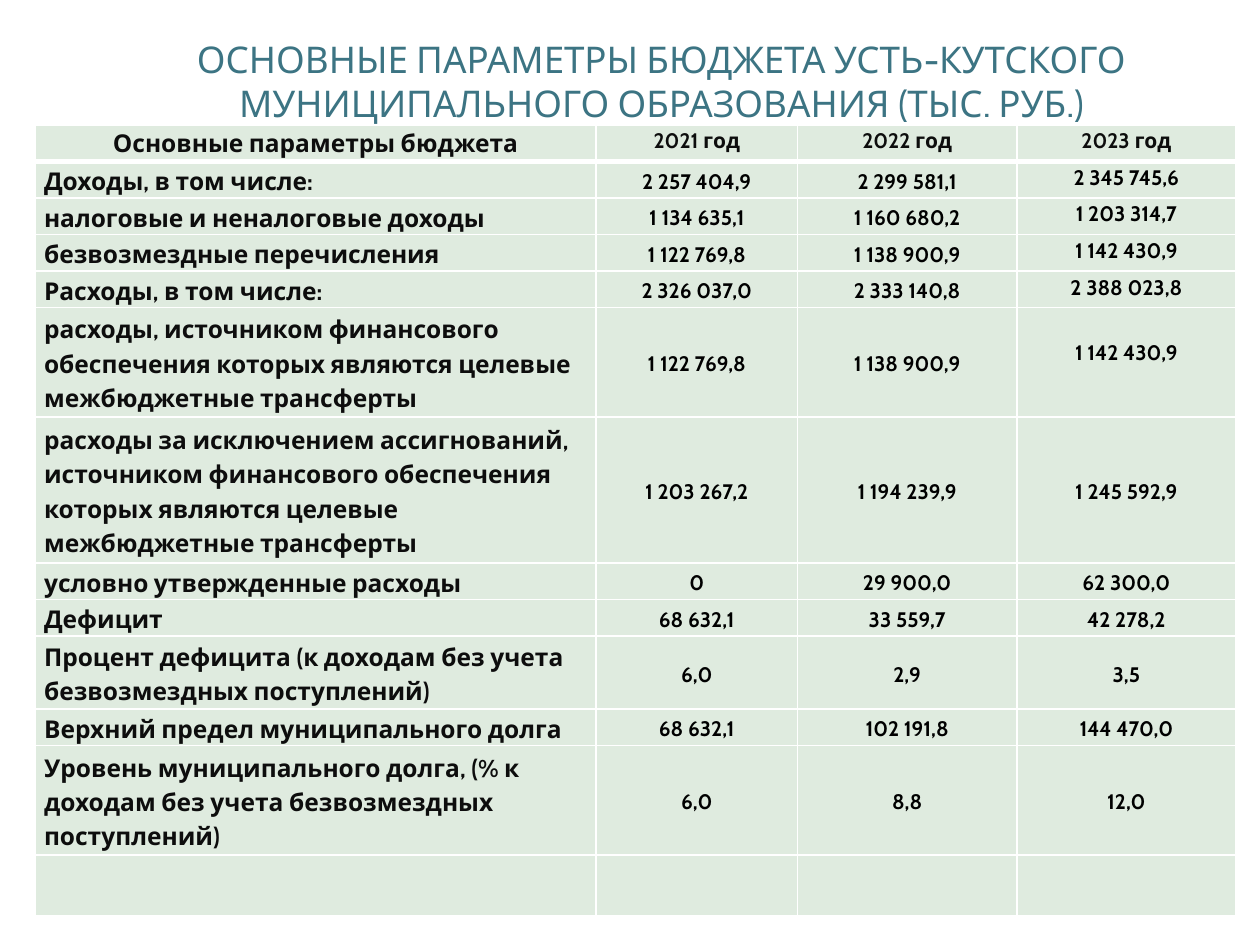
from dataclasses import dataclass

from lxml.etree import SubElement
from pptx import Presentation
from pptx.dml.color import RGBColor as RGB
from pptx.enum.text import MSO_ANCHOR as Anchor, PP_ALIGN as Align
from pptx.oxml.ns import qn
from pptx.util import Inches, Pt


@dataclass(frozen=True)
class Theme:
    font: str = "Cabin"
    title: RGB = RGB(0x3C, 0x74, 0x83)
    label: RGB = RGB(0x0D, 0x0D, 0x0D)
    value: RGB = RGB(0, 0, 0)
    cell: RGB = RGB(0xDF, 0xEB, 0xDF)
    border: str = "FFFFFF"
    title_size: int = 21
    label_size: int = 14
    value_size: int = 12


@dataclass(frozen=True)
class BudgetRow:
    label: str
    values: tuple[str, str, str]
    height: float = 0.29
    last_top: float | None = None  # top inset when the last value is top-anchored


THEME = Theme()
NBSP = " "
COL_WIDTHS = (4.45, 1.6, 1.74, 1.74)
EMPTY_HEIGHT = 0.48

HEADER = BudgetRow("Основные параметры бюджета", ("2021 год", "2022 год", "2023 год"))
ROWS = (
    BudgetRow("Доходы, в том числе:",
              ("2 257 404,9", "2 299 581,1", "2 345 745,6"), last_top=0),
    BudgetRow("налоговые и неналоговые доходы",
              ("1 134 635,1", "1 160 680,2", "1 203 314,7"), last_top=0),
    BudgetRow("безвозмездные перечисления",
              ("1 122 769,8", "1 138 900,9", "1 142 430,9"), last_top=0),
    BudgetRow("Расходы, в том числе:",
              ("2 326 037,0", "2 333 140,8", "2 388 023,8"), last_top=0),
    BudgetRow("расходы, источником финансового обеспечения которых являются "
              "целевые межбюджетные трансферты",
              ("1 122 769,8", "1 138 900,9", "1 142 430,9"), 0.87, last_top=0.23),
    BudgetRow("расходы за исключением ассигнований, источником финансового "
              "обеспечения которых являются целевые межбюджетные трансферты",
              ("1 203 267,2", "1 194 239,9", "1 245 592,9"), 1.16),
    BudgetRow("условно утвержденные расходы", ("0", "29 900,0", "62 300,0")),
    BudgetRow("Дефицит", ("68 632,1", "33 559,7", "42 278,2")),
    BudgetRow("Процент дефицита (к доходам без учета безвозмездных поступлений)",
              ("6,0", "2,9", "3,5"), 0.58),
    BudgetRow("Верхний предел муниципального долга",
              ("68 632,1", "102 191,8", "144 470,0")),
    BudgetRow("Уровень муниципального долга, (% к доходам без учета "
              "безвозмездных поступлений)", ("6,0", "8,8", "12,0"), 0.87),
)


def add_run(p, text: str, size: int, color: RGB, bold: bool = False) -> None:
    r = p.add_run()
    r.text = text
    r.font.name = THEME.font
    r.font.size = Pt(size)
    r.font.bold = bold
    r.font.color.rgb = color


def style_cell(cell, bottom: int = 1) -> None:
    """Fill the cell and give it white borders."""
    cell.fill.solid()
    cell.fill.fore_color.rgb = THEME.cell
    tc_pr = cell._tc.get_or_add_tcPr()
    for i, (side, width) in enumerate(zip("LRTB", (1, 1, 1, bottom))):
        ln = SubElement(tc_pr, qn(f"a:ln{side}"), w=str(Pt(width)))
        fill = SubElement(ln, qn("a:solidFill"))
        SubElement(fill, qn("a:srgbClr"), val=THEME.border)
        tc_pr.insert(i, ln)  # borders come before the fill


def write_cell(cell, text: str, size: int, color: RGB, align: Align,
               anchor: Anchor, top: float = 0) -> None:
    cell.margin_left = cell.margin_right = Inches(0.07)
    cell.margin_top, cell.margin_bottom = Inches(top), 0
    cell.vertical_anchor = anchor
    p = cell.text_frame.paragraphs[0]
    p.alignment = align
    p.line_spacing = 1.15
    add_run(p, text, size, color, bold=True)


def write_header(table) -> None:
    for col, text in enumerate((HEADER.label, *HEADER.values)):
        size = THEME.value_size if col else THEME.label_size
        write_cell(table.cell(0, col), text, size, THEME.label, Align.CENTER, Anchor.TOP)


def write_row(table, index: int, row: BudgetRow) -> None:
    write_cell(table.cell(index, 0), row.label, THEME.label_size, THEME.label,
               Align.LEFT, Anchor.MIDDLE)
    for col, value in enumerate(row.values, start=1):
        raised = col == len(row.values) and row.last_top is not None
        write_cell(table.cell(index, col), value.replace(" ", NBSP),
                   THEME.value_size, THEME.value, Align.CENTER,
                   Anchor.TOP if raised else Anchor.MIDDLE,
                   row.last_top if raised else 0)


def add_budget_table(s) -> None:
    heights = [row.height for row in (HEADER, *ROWS)] + [EMPTY_HEIGHT]
    table = s.shapes.add_table(
        len(heights), len(COL_WIDTHS), Inches(0.28), Inches(0.99),
        Inches(sum(COL_WIDTHS)), Inches(sum(heights))).table
    for column, width in zip(table.columns, COL_WIDTHS):
        column.width = Inches(width)
    for i, height in enumerate(heights):
        table.rows[i].height = Inches(height)
        for cell in table.rows[i].cells:
            style_cell(cell, bottom=1 if i else 3)
    write_header(table)
    for i, row in enumerate(ROWS, start=1):
        write_row(table, i, row)


def add_title(s) -> None:
    sp = s.shapes.add_textbox(Inches(0.5), Inches(0.13), Inches(9.5), Inches(1.02))
    tf = sp.text_frame
    tf.word_wrap = True
    tf.vertical_anchor = Anchor.MIDDLE
    p = tf.paragraphs[0]
    p.alignment = Align.CENTER
    add_run(p, "ОСНОВНЫЕ ПАРАМЕТРЫ БЮДЖЕТА УСТЬ-КУТСКОГО МУНИЦИПАЛЬНОГО "
               "ОБРАЗОВАНИЯ (ТЫС. РУБ.)", THEME.title_size, THEME.title)


def main() -> None:
    prs = Presentation()
    prs.slide_width, prs.slide_height = Inches(10), Inches(7.5)
    s = prs.slides.add_slide(prs.slide_layouts[6])
    add_budget_table(s)
    add_title(s)
    prs.save("out.pptx")


if __name__ == "__main__":
    main()
